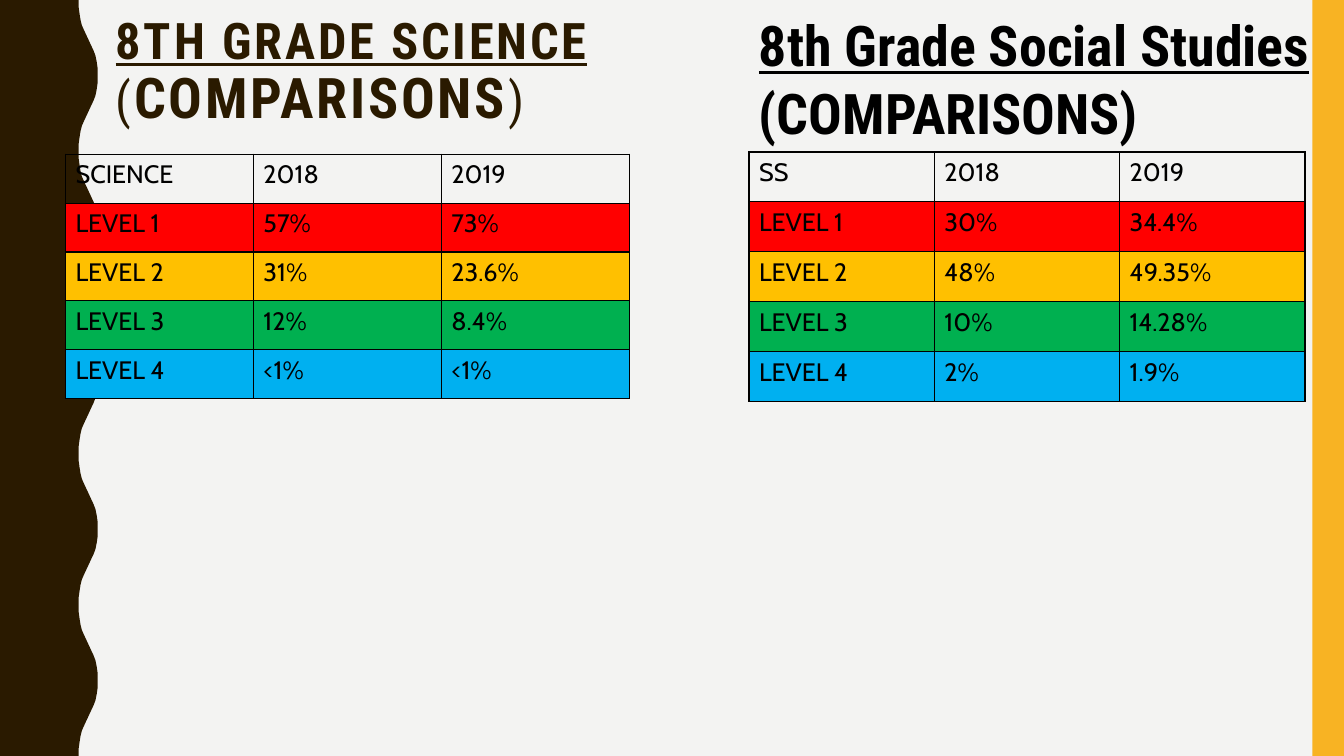
from dataclasses import dataclass

from lxml.etree import SubElement
from pptx import Presentation
from pptx.dml.color import RGBColor as RGB
from pptx.enum.shapes import MSO_SHAPE as SHAPE
from pptx.enum.text import MSO_ANCHOR as ANCHOR
from pptx.oxml.ns import qn
from pptx.util import Pt


@dataclass(frozen=True)
class Theme:
    background: str = "F3F3F2"
    brown: str = "2A1A00"
    gold: str = "F8B323"
    black: str = "000000"
    levels: tuple = ("FF0000", "FFC000", "00B050", "00B0F0")
    heading_font: str = "Roboto Condensed"
    body_font: str = "Cabin"
    large: int = 40
    medium: int = 36
    body: int = 18


THEME = Theme()
WIDTH, HEIGHT = 960, 540
HALF_WAVE = 54
WAVE = [
    (56.2, 0), (56.2, 5), (56.9, 10), (57.6, 14.4), (58.5, 18),
    (59.8, 21), (61.2, 24), (62.6, 27), (64, 30), (65.4, 33),
    (66.8, 36), (68.2, 39.6), (69.1, 44), (69.8, 49), (69.8, 54),
]
SCIENCE = [
    ("SCIENCE", "2018", "2019"),
    ("LEVEL 1", "57%", "73%"),
    ("LEVEL 2", "31%", "23.6%"),
    ("LEVEL 3", "12%", "8.4%"),
    ("LEVEL 4", "<1%", "<1%"),
]
SOCIAL_STUDIES = [
    ("SS", "2018", "2019"),
    ("LEVEL 1", "30%", "34.4%"),
    ("LEVEL 2", "48%", "49.35%"),
    ("LEVEL 3", "10%", "14.28%"),
    ("LEVEL 4", "2%", "1.9%"),
]


def paint(sp, color):
    sp.shadow.inherit = False
    sp.fill.solid()
    sp.fill.fore_color.rgb = RGB.from_string(color)
    sp.line.fill.background()


def add_wave(s):
    edge = []
    for half in range(HEIGHT // HALF_WAVE):
        top = half * HALF_WAVE
        if half % 2:
            edge += [(x, top + HALF_WAVE - y) for x, y in reversed(WAVE)]
        else:
            edge += [(x, top + y) for x, y in WAVE]
    outline = edge + [(0, HEIGHT)]
    builder = s.shapes.build_freeform(0, 0)
    builder.add_line_segments([(Pt(x), Pt(y)) for x, y in outline], close=True)
    paint(builder.convert_to_shape(), THEME.brown)


def add_bar(s, left, width):
    sp = s.shapes.add_shape(SHAPE.RECTANGLE, Pt(left), 0, Pt(width), Pt(HEIGHT))
    paint(sp, THEME.gold)


def add_run(p, text, size, font, color, bold=False, underline=False, spacing=0):
    r = p.add_run()
    r.text = text
    r.font.size = Pt(size)
    r.font.name = font
    r.font.color.rgb = RGB.from_string(color)
    r.font.bold = bold
    r.font.underline = underline
    if spacing:
        r._r.get_or_add_rPr().set("spc", str(spacing * 100))


def add_heading(s, box, lines, color, spacing=0, line_spacing=1.0):
    sp = s.shapes.add_textbox(*map(Pt, box))
    tf = sp.text_frame
    tf.word_wrap = True
    tf.vertical_anchor = ANCHOR.TOP
    p = tf.paragraphs[0]
    p.line_spacing = line_spacing
    for i, line in enumerate(lines):
        if i:
            p.add_line_break()
        for text, size, bold in line:
            add_run(p, text, size, THEME.heading_font, color, bold, i == 0, spacing)


def add_borders(cell):
    tc_pr = cell._tc.get_or_add_tcPr()
    for side in ("a:lnL", "a:lnR", "a:lnT", "a:lnB"):
        ln = SubElement(tc_pr, qn(side), w=str(Pt(1)))
        fill = SubElement(ln, qn("a:solidFill"))
        SubElement(fill, qn("a:srgbClr"), val=THEME.black)


def add_level_table(s, left, top, col_width, row_height, rows):
    n_rows, n_cols = len(rows), len(rows[0])
    table = s.shapes.add_table(
        n_rows, n_cols, Pt(left), Pt(top),
        Pt(col_width * n_cols), Pt(row_height * n_rows),
    ).table
    table.first_row = False
    table.horz_banding = False
    for column in table.columns:
        column.width = Pt(col_width)
    for i, values in enumerate(rows):
        table.rows[i].height = Pt(row_height)
        for j, value in enumerate(values):
            cell = table.cell(i, j)
            add_borders(cell)
            if i:
                cell.fill.solid()
                cell.fill.fore_color.rgb = RGB.from_string(THEME.levels[i - 1])
            else:
                cell.fill.background()
            p = cell.text_frame.paragraphs[0]
            add_run(p, value, THEME.body, THEME.body_font, THEME.black)


def main():
    prs = Presentation()
    prs.slide_width, prs.slide_height = Pt(WIDTH), Pt(HEIGHT)
    s = prs.slides.add_slide(prs.slide_layouts[6])
    s.background.fill.solid()
    s.background.fill.fore_color.rgb = RGB.from_string(THEME.background)

    add_wave(s)
    add_bar(s, 937.5, 22.5)
    science_heading = [
        [("8TH GRADE SCIENCE", THEME.medium, True)],
        [
            ("(", THEME.medium, False),
            ("COMPARISONS", THEME.large, True),
            (")", THEME.medium, False),
        ],
    ]
    add_heading(s, (75.6, 7.9, 828, 104.4), science_heading, THEME.brown, 2, 0.9)
    add_level_table(s, 46.8, 110.2, 134.2, 34.9, SCIENCE)
    add_level_table(s, 535, 108.5, 132.4, 35.7, SOCIAL_STUDIES)
    social_heading = [
        [("8th Grade Social Studies", THEME.large, True)],
        [("(COMPARISONS)", THEME.large, True)],
    ]
    add_heading(s, (535, 4.3, 480, 104.4), social_heading, THEME.black)
    prs.save("out.pptx")


if __name__ == "__main__":
    main()
